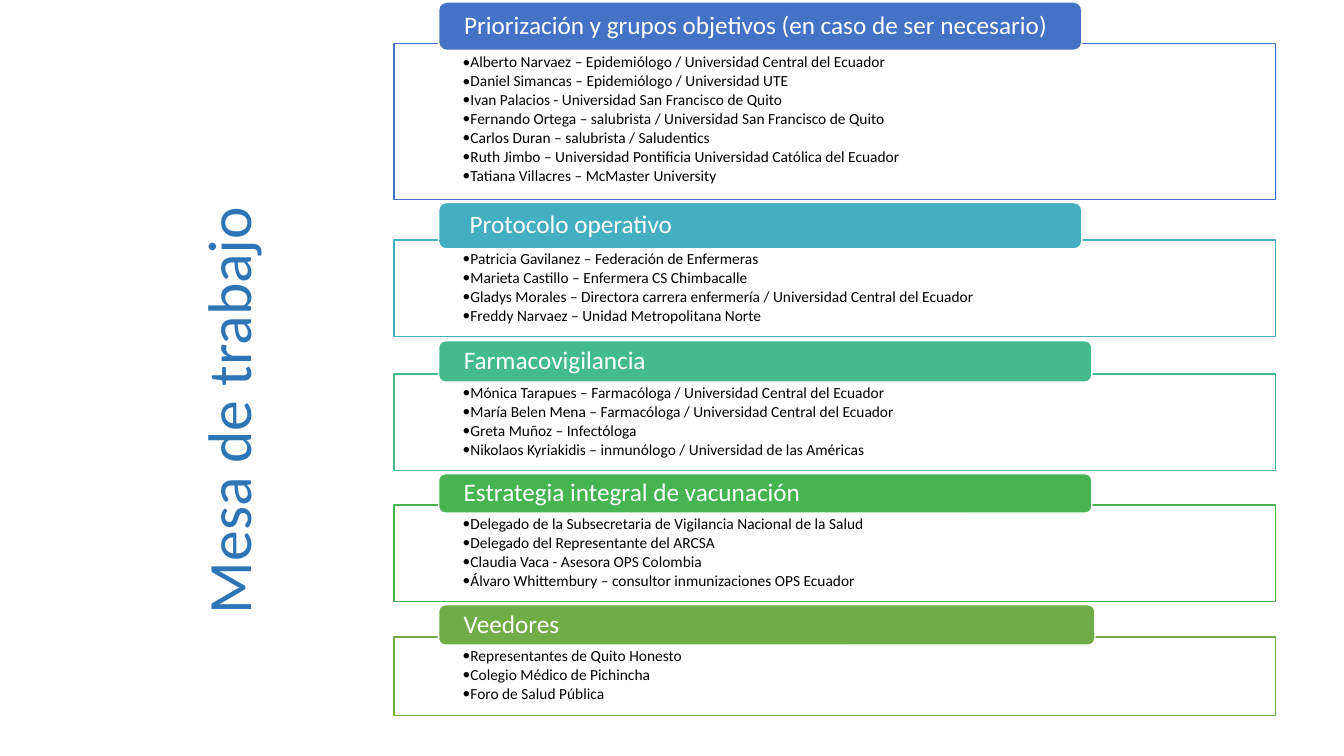
import pptx
import pptx.util
import pptx.dml.color
import pptx.enum.shapes
import pptx.enum.text
import pptx.oxml.ns
from dataclasses import dataclass
from lxml import etree

Inches, Pt = pptx.util.Inches, pptx.util.Pt
RGB = pptx.dml.color.RGBColor.from_string
SHAPE = pptx.enum.shapes.MSO_SHAPE
ALIGN = pptx.enum.text.PP_ALIGN
ANCHOR = pptx.enum.text.MSO_ANCHOR
qn = pptx.oxml.ns.qn


@dataclass
class Theme:
    font: str = "Calibri"
    title: str = "2E75B6"
    white: str = "FFFFFF"
    text: str = "000000"
    title_size: int = 44
    head_size: int = 18
    body_size: int = 11


theme = Theme()


def add_box(kind, left, top, width, height, fill, line, anchor, insets):
    sp = s.shapes.add_shape(kind, Inches(left), Inches(top), Inches(width), Inches(height))
    sp.shadow.inherit = False
    sp.fill.solid()
    sp.fill.fore_color.rgb = RGB(fill)
    sp.line.color.rgb = RGB(line)
    sp.line.width = Pt(1)
    tf = sp.text_frame
    tf.word_wrap = True
    tf.vertical_anchor = anchor
    tf.margin_left = tf.margin_right = Inches(insets[0])
    tf.margin_top, tf.margin_bottom = Inches(insets[1]), Inches(insets[2])
    return sp


def add_text(p, text, size, color):
    p.alignment = ALIGN.LEFT
    p.line_spacing = 0.9
    r = p.add_run()
    r.text = text
    r.font.name = theme.font
    r.font.size = Pt(size)
    r.font.color.rgb = RGB(color)


prs = pptx.Presentation()
prs.slide_width, prs.slide_height = Inches(13.33), Inches(7.5)
s = prs.slides.add_slide(prs.slide_layouts[5])

# Vertical title
title = s.shapes.title
title.left, title.top = Inches(-0.61), Inches(2.56)
title.width, title.height = Inches(5.82), Inches(1.45)
title.rotation = 270
title.text_frame.word_wrap = True
title.text_frame.vertical_anchor = ANCHOR.MIDDLE
add_text(title.text_frame.paragraphs[0], "Mesa de trabajo", theme.title_size, theme.title)

# Groups: heading, colour, heading (top, width, height), list (top, height), members
groups = [
    ("Priorización y grupos objetivos (en caso de ser necesario)", "4472C4",
     (0.02, 6.38, 0.48), (0.43, 1.55), [
         "Alberto Narvaez – Epidemiólogo / Universidad Central del Ecuador",
         "Daniel Simancas – Epidemiólogo / Universidad UTE",
         "Ivan Palacios - Universidad San Francisco de Quito",
         "Fernando Ortega – salubrista / Universidad San Francisco de Quito",
         "Carlos Duran – salubrista / Saludentics",
         "Ruth Jimbo – Universidad Pontificia Universidad Católica del Ecuador",
         "Tatiana Villacres – McMaster University"]),
    (" Protocolo operativo", "43AFC0", (2.01, 6.38, 0.46), (2.38, 0.96), [
        "Patricia Gavilanez – Federación de Enfermeras",
        "Marieta Castillo – Enfermera CS Chimbacalle",
        "Gladys Morales – Directora carrera enfermería / Universidad Central del Ecuador",
        "Freddy Narvaez – Unidad Metropolitana Norte"]),
    ("Farmacovigilancia", "43BB8D", (3.38, 6.48, 0.41), (3.71, 0.96), [
        "Mónica Tarapues – Farmacóloga / Universidad Central del Ecuador",
        "María Belen Mena – Farmacóloga / Universidad Central del Ecuador",
        "Greta Muñoz – Infectóloga",
        "Nikolaos Kyriakidis – inmunólogo / Universidad de las Américas"]),
    ("Estrategia integral de vacunación", "45B451", (4.7, 6.48, 0.39), (5.01, 0.96), [
        "Delegado de la Subsecretaria de Vigilancia Nacional de la Salud",
        "Delegado del Representante del ARCSA",
        "Claudia Vaca - Asesora OPS Colombia",
        "Álvaro Whittembury – consultor inmunizaciones OPS Ecuador"]),
    ("Veedores", "70AD47", (6, 6.51, 0.4), (6.32, 0.78), [
        "Representantes de Quito Honesto",
        "Colegio Médico de Pichincha",
        "Foro de Salud Pública"]),
]

for heading, color, (head_top, head_width, head_height), (top, height), members in groups:
    # Outlined list of members
    sp = add_box(SHAPE.RECTANGLE, 3.91, top, 8.74, height, theme.white, color,
                 ANCHOR.TOP, (0.68, 0.11, 0.09))
    fill = sp.element.spPr.find(qn("a:solidFill")).find(qn("a:srgbClr"))
    etree.SubElement(fill, qn("a:alpha"), val="90000")
    tf = sp.text_frame
    for i, member in enumerate(members):
        p = tf.add_paragraph() if i else tf.paragraphs[0]
        p.level = 1
        p.space_after = Pt(1.65)
        add_text(p, member, theme.body_size, theme.text)
        pPr = p._p.get_or_add_pPr()
        pPr.set("marL", str(Inches(0.06)))
        pPr.set("indent", str(Inches(-0.06)))
        etree.SubElement(pPr, qn("a:buFont"), typeface=theme.font)
        etree.SubElement(pPr, qn("a:buChar"), char="•")

    # Coloured heading over the top edge
    sp = add_box(SHAPE.ROUNDED_RECTANGLE, 4.35, head_top, head_width, head_height, color,
                 theme.white, ANCHOR.MIDDLE, (0.23, 0, 0))
    add_text(sp.text_frame.paragraphs[0], heading, theme.head_size, theme.white)

prs.save("out.pptx")
